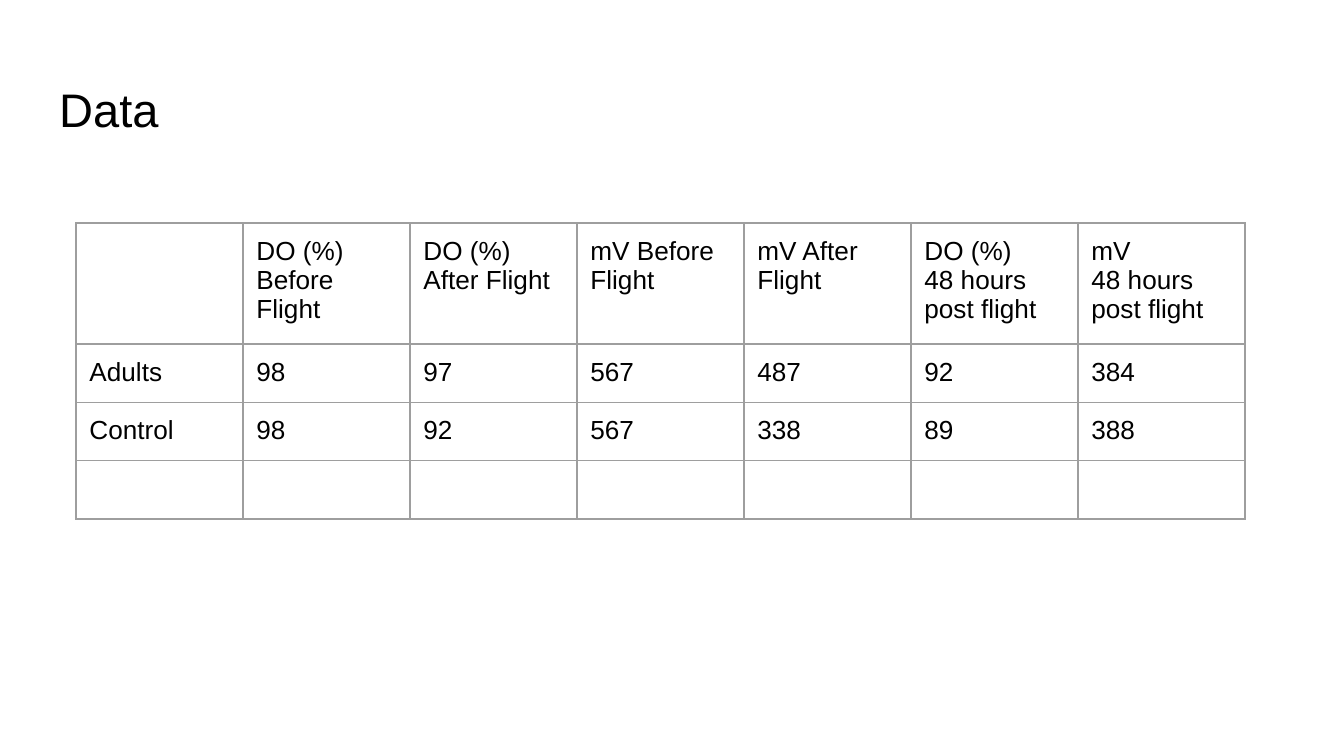
import pptx
import pptx.dml.color
import pptx.enum.text
import pptx.oxml.ns
import pptx.util
from lxml import etree

TITLE = "Data"
ROWS = [
    ["", "DO (%) Before Flight", "DO (%) After Flight", "mV Before Flight",
     "mV After Flight", "DO (%)\n48 hours post flight", "mV\n48 hours post flight"],
    ["Adults", "98", "97", "567", "487", "92", "384"],
    ["Control", "98", "92", "567", "338", "89", "388"],
    [""] * 7,
]

BLACK = pptx.dml.color.RGBColor(0x00, 0x00, 0x00)
GREY = pptx.dml.color.RGBColor(0x9E, 0x9E, 0x9E)
FONT = "Arial"
TITLE_SIZE = pptx.util.Pt(25.2)
CELL_SIZE = pptx.util.Pt(14)
BORDER = pptx.util.Pt(0.75)
INSET = pptx.util.Inches(0.1)

SLIDE_W, SLIDE_H = 1344, 756
TITLE_BOX = (46, 66, 1252, 85)
TABLE_LEFT, TABLE_TOP = 76, 223
COL_W = 167
ROW_HEIGHTS = [115, 58, 58, 57]


def px(n):
    return pptx.util.Emu(round(n * 914400 / 134.4))


def set_insets(item):
    """Give a text frame or table cell the same margin on every side."""
    item.margin_left = item.margin_right = INSET
    item.margin_top = item.margin_bottom = INSET


def format_text(tf, size):
    for p in tf.paragraphs:
        for r in p.runs:
            r.font.name = FONT
            r.font.size = size
            r.font.color.rgb = BLACK
        if not p.runs:  # keeps an empty row from growing to the default size
            etree.SubElement(p._p, pptx.oxml.ns.qn("a:endParaRPr"),
                             sz=str(int(size.pt * 100)))


def add_borders(cell):
    tc_pr = cell._tc.get_or_add_tcPr()
    for side in ("lnL", "lnR", "lnT", "lnB"):
        ln = etree.SubElement(tc_pr, pptx.oxml.ns.qn(f"a:{side}"), w=str(BORDER))
        fill = etree.SubElement(ln, pptx.oxml.ns.qn("a:solidFill"))
        etree.SubElement(fill, pptx.oxml.ns.qn("a:srgbClr"), val=str(GREY))


def add_title(slide):
    tf = slide.shapes.add_textbox(*map(px, TITLE_BOX)).text_frame
    tf.word_wrap = True
    tf.vertical_anchor = pptx.enum.text.MSO_ANCHOR.MIDDLE
    set_insets(tf)
    tf.text = TITLE
    format_text(tf, TITLE_SIZE)


def add_data_table(slide):
    n_cols = len(ROWS[0])
    table = slide.shapes.add_table(
        len(ROWS), n_cols, px(TABLE_LEFT), px(TABLE_TOP),
        px(COL_W * n_cols), px(sum(ROW_HEIGHTS))).table
    table.first_row = table.horz_banding = False
    for col in table.columns:
        col.width = px(COL_W)
    for row, height, texts in zip(table.rows, ROW_HEIGHTS, ROWS):
        row.height = px(height)
        for cell, text in zip(row.cells, texts):
            set_insets(cell)
            add_borders(cell)
            cell.fill.background()
            cell.text_frame.text = text
            format_text(cell.text_frame, CELL_SIZE)


def main():
    prs = pptx.Presentation()
    prs.slide_width, prs.slide_height = px(SLIDE_W), px(SLIDE_H)
    slide = prs.slides.add_slide(prs.slide_layouts[6])
    add_title(slide)
    add_data_table(slide)
    prs.save("out.pptx")


if __name__ == "__main__":
    main()
